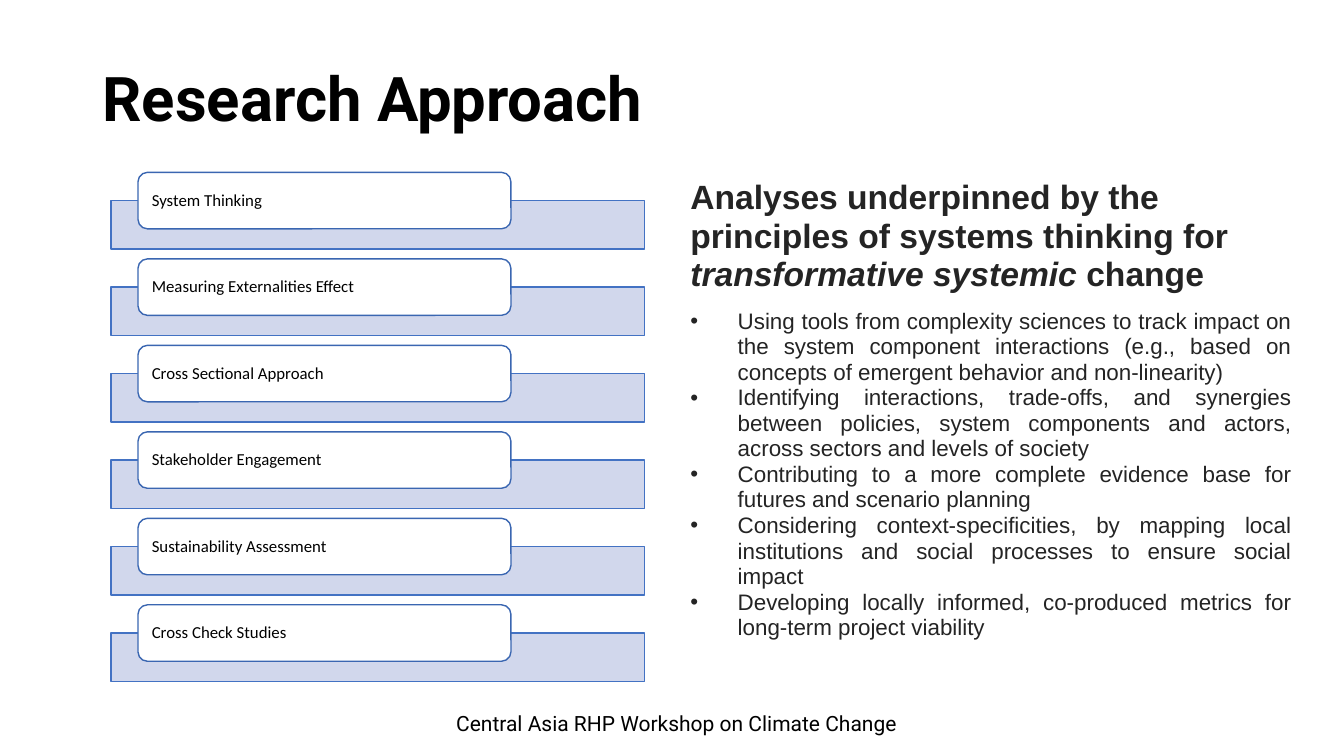
from lxml import etree
from pptx import Presentation
from pptx import util as u
from pptx.dml.color import RGBColor
from pptx.enum import shapes, text
from pptx.oxml.ns import qn

BLACK = RGBColor(0x00, 0x00, 0x00)
WHITE = RGBColor(0xFF, 0xFF, 0xFF)
INK = RGBColor(0x24, 0x24, 0x24)
BAR_FILL = RGBColor(0xCC, 0xD3, 0xEA)
BAR_LINE = RGBColor(0x43, 0x72, 0xC3)
LABEL_LINE = RGBColor(0x3A, 0x66, 0xB1)

prs = Presentation()
prs.slide_width, prs.slide_height = u.Inches(13.33), u.Inches(7.5)
s = prs.slides.add_slide(prs.slide_layouts[6])


def share(left, top, width, height):
    w, h = prs.slide_width / 100, prs.slide_height / 100
    return [round(v) for v in (left * w, top * h, width * w, height * h)]


def add_run(p, words, size, font, color, bold=False, italic=False):
    r = p.add_run()
    r.text = words
    r.font.size, r.font.name = u.Pt(size), font
    r.font.bold, r.font.italic = bold, italic
    r.font.color.rgb = color


tf = s.shapes.add_textbox(*share(33.2, 93.3, 50, 4.7)).text_frame
tf.word_wrap = True
add_run(tf.paragraphs[0], "Central Asia RHP Workshop оn Climate Change", 15, "Roboto", BLACK)

tf = s.shapes.add_textbox(*share(6.9, 5.3, 86.25, 16.4)).text_frame
tf.word_wrap = True
tf.vertical_anchor = text.MSO_ANCHOR.MIDDLE
tf.paragraphs[0].line_spacing = 0.9
add_run(tf.paragraphs[0], "Research Approach", 44, "Roboto", BLACK, bold=True)

tf = s.shapes.add_textbox(*share(50.63, 23.07, 46.2, 66.9)).text_frame
tf.word_wrap = True
p = tf.paragraphs[0]
p.line_spacing = 0.95
for words, italic in [
    ("Analyses underpinned by the principles of systems thinking for ", False),
    ("transformative systemic ", True),
    ("change", False),
]:
    add_run(p, words, 24, "Arial", INK, bold=True, italic=italic)

points = [
    "Using tools from complexity sciences to track impact on the system component interactions (e.g., based on concepts of emergent behavior and non-linearity)",
    "Identifying interactions, trade-offs, and synergies between policies, system components and actors, across sectors and levels of society",
    "Contributing to a more complete evidence base for futures and scenario planning",
    "Considering context-specificities, by mapping local institutions and social processes to ensure social impact",
    "Developing locally informed, co-produced metrics for long-term project viability",
]
for i, point in enumerate(points):
    p = tf.add_paragraph()
    p.alignment = text.PP_ALIGN.JUSTIFY
    p.line_spacing = 0.95
    p.space_before = u.Pt(0 if i else 10.5)
    pPr = p._p.get_or_add_pPr()
    pPr.set("marL", str(u.Inches(0.47)))
    pPr.set("indent", str(-u.Inches(0.47)))
    color = etree.SubElement(pPr, qn("a:buClr"))
    etree.SubElement(color, qn("a:srgbClr"), val=str(INK))
    etree.SubElement(pPr, qn("a:buFont"), typeface="Arial")
    etree.SubElement(pPr, qn("a:buChar"), char="•")
    add_run(p, point, 16, "Arial", INK)

steps = [
    "System Thinking",
    "Measuring Externalities Effect",
    "Cross Sectional Approach",
    "Stakeholder Engagement",
    "Sustainability Assessment",
    "Cross Check Studies",
]
for i, step in enumerate(steps):
    top = 22.8 + 11.44 * i
    bar = s.shapes.add_shape(shapes.MSO_SHAPE.RECTANGLE, *share(8.25, top + 3.73, 39.7, 6.4))
    label = s.shapes.add_shape(shapes.MSO_SHAPE.ROUNDED_RECTANGLE, *share(10.27, top, 27.75, 7.47))
    for sp, fill, line in [(bar, BAR_FILL, BAR_LINE), (label, WHITE, LABEL_LINE)]:
        sp.shadow.inherit = False
        sp.fill.solid()
        sp.fill.fore_color.rgb = fill
        sp.line.color.rgb = line
        sp.line.width = u.Pt(1)
    bar_color = bar._element.spPr.find(qn("a:solidFill")).find(qn("a:srgbClr"))
    etree.SubElement(bar_color, qn("a:alpha"), val="89000")
    tf = label.text_frame
    tf.word_wrap = True
    tf.vertical_anchor = text.MSO_ANCHOR.MIDDLE
    tf.margin_left = tf.margin_right = u.Inches(0.11)
    tf.margin_top = tf.margin_bottom = 0
    p = tf.paragraphs[0]
    p.alignment = text.PP_ALIGN.LEFT
    p.line_spacing = 0.9
    add_run(p, step, 12, "Calibri", BLACK)

prs.save("out.pptx")
